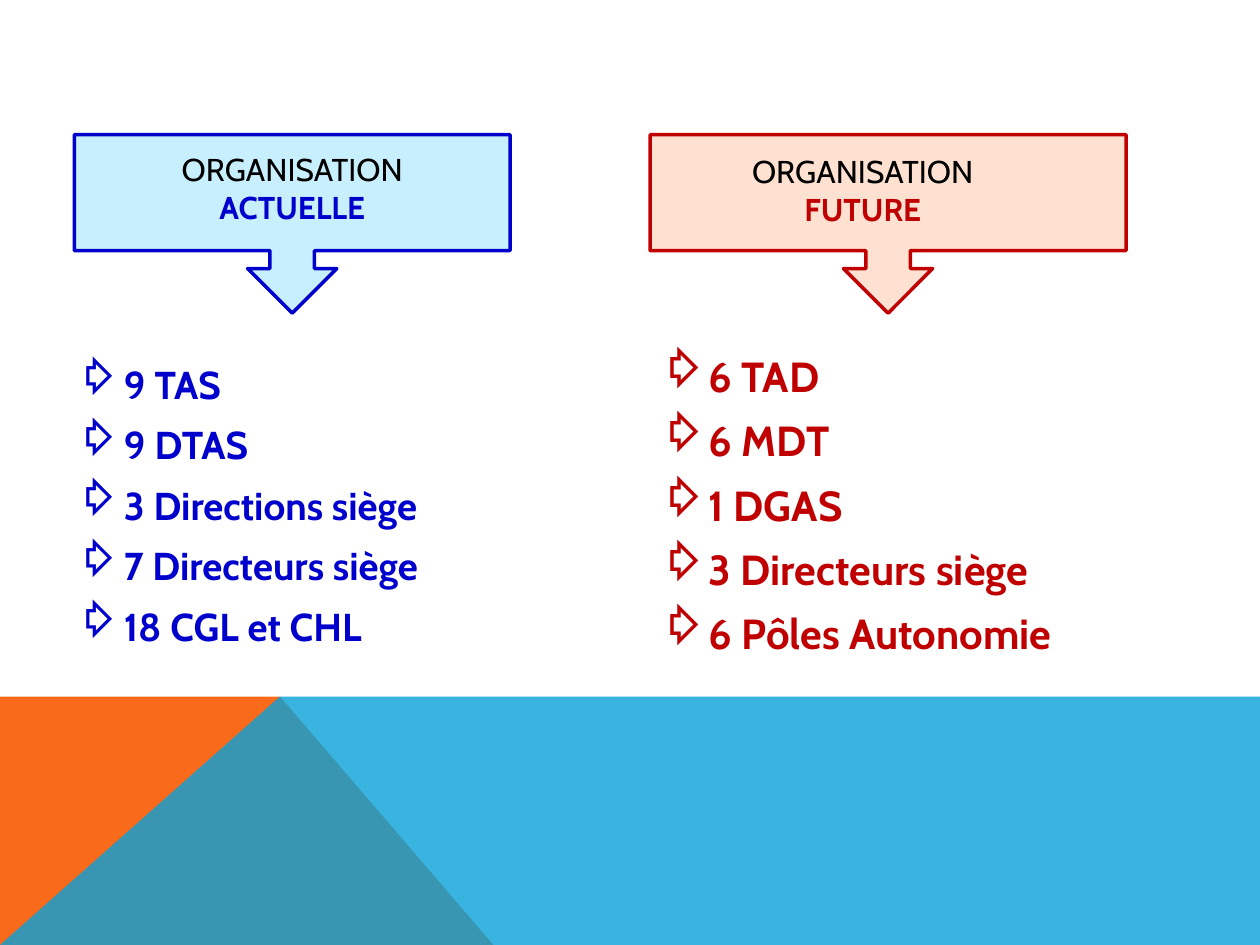
from lxml.etree import SubElement as Sub
from pptx import Presentation
from pptx.dml.color import RGBColor as RGB
from pptx.enum.shapes import MSO_SHAPE as Geo
from pptx.enum.text import PP_ALIGN as Align
from pptx.oxml.ns import qn
from pptx.util import Pt

FONT = "Cabin"
COLORS = {
    "black": "000000", "orange": "F96A1B", "sky": "08A1D9",
    "blue": "0000CC", "pale": "C8EFFD", "red": "C00000", "peach": "FEE1D1",
}
WIDE, HIGH = 720, 540

# Content: boxes are left, top, width, height in points
SIDES = [
    {"head": "ACTUELLE", "ink": "blue", "fill": "pale", "size": 22.2,
     "call": (42.5, 77, 249, 102), "title": (85, 82, 164, 51),
     "list": (36.7, 202.3, 294.5, 177),
     "items": ["9 TAS", "9 DTAS", "3 Directions siège",
               "7 Directeurs siège", "18 CGL et CHL"]},
    {"head": "FUTURE", "ink": "red", "fill": "peach", "size": 24,
     "call": (371.5, 77, 272, 102), "title": (411, 83.5, 164, 51),
     "list": (370, 196.6, 252, 182),
     "items": ["6 TAD", "6 MDT", "1 DGAS",
               "3 Directeurs siège", "6 Pôles Autonomie"]},
]
EDGE, PEAK, FOOT = 397.5, 160.5, 281.5
BANDS = [
    ("orange", 100, [(0, HIGH), (0, EDGE), (PEAK, EDGE), (FOOT, HIGH)]),
    ("sky", 80, [(0, HIGH), (PEAK, EDGE), (WIDE, EDGE), (WIDE, HIGH)]),
]

deck = Presentation()
deck.slide_width, deck.slide_height = Pt(WIDE), Pt(HIGH)
slide = deck.slides.add_slide(deck.slide_layouts[6])
shapes = slide.shapes


def color(name):
    return RGB.from_string(COLORS[name])


def paint(shape, name):
    shape.shadow.inherit = False
    shape.fill.solid()
    shape.fill.fore_color.rgb = color(name)


def text_box(box):
    frame = shapes.add_textbox(*map(Pt, box)).text_frame
    frame.word_wrap = True
    return frame


def add_band(name, alpha, points):
    pen = shapes.build_freeform(*points[0], scale=Pt(1))
    pen.add_line_segments(points[1:], close=True)
    band = pen.convert_to_shape()
    paint(band, name)
    band.line.fill.background()
    if alpha < 100:
        tint = band.fill._xPr.find(qn("a:solidFill"))[0]
        Sub(tint, qn("a:alpha"), val=str(alpha * 1000))


def add_call(side):
    call = shapes.add_shape(Geo.DOWN_ARROW_CALLOUT, *map(Pt, side["call"]))
    paint(call, side["fill"])
    call.line.color.rgb = color(side["ink"])
    call.line.width = Pt(2)


def add_title(side):
    para = text_box(side["title"]).paragraphs[0]
    para.alignment = Align.CENTER
    para.font.name, para.font.size = FONT, Pt(18)
    for text, ink, bold in [("ORGANISATION ", "black", False),
                            (side["head"], side["ink"], True)]:
        run = para.add_run()
        run.text = text
        run.font.bold = bold
        run.font.color.rgb = color(ink)


def add_list(side):
    frame = text_box(side["list"])
    for i, item in enumerate(side["items"]):
        para = frame.add_paragraph() if i else frame.paragraphs[0]
        para.text = item
        # Hanging arrow bullet
        props = para._p.get_or_add_pPr()
        props.set("marL", str(Pt(27)))
        props.set("indent", str(Pt(-27)))
        Sub(props, qn("a:buChar"), char="⇨")
        if i:
            para.space_before = Pt(8)
        font = para.font
        font.name, font.size, font.bold = FONT, Pt(side["size"]), True
        font.color.rgb = color(side["ink"])


# Footer bands
for band in BANDS:
    add_band(*band)

# Two columns: callout, title and list
for side in SIDES:
    add_call(side)
    add_title(side)
    add_list(side)

deck.save("out.pptx")
